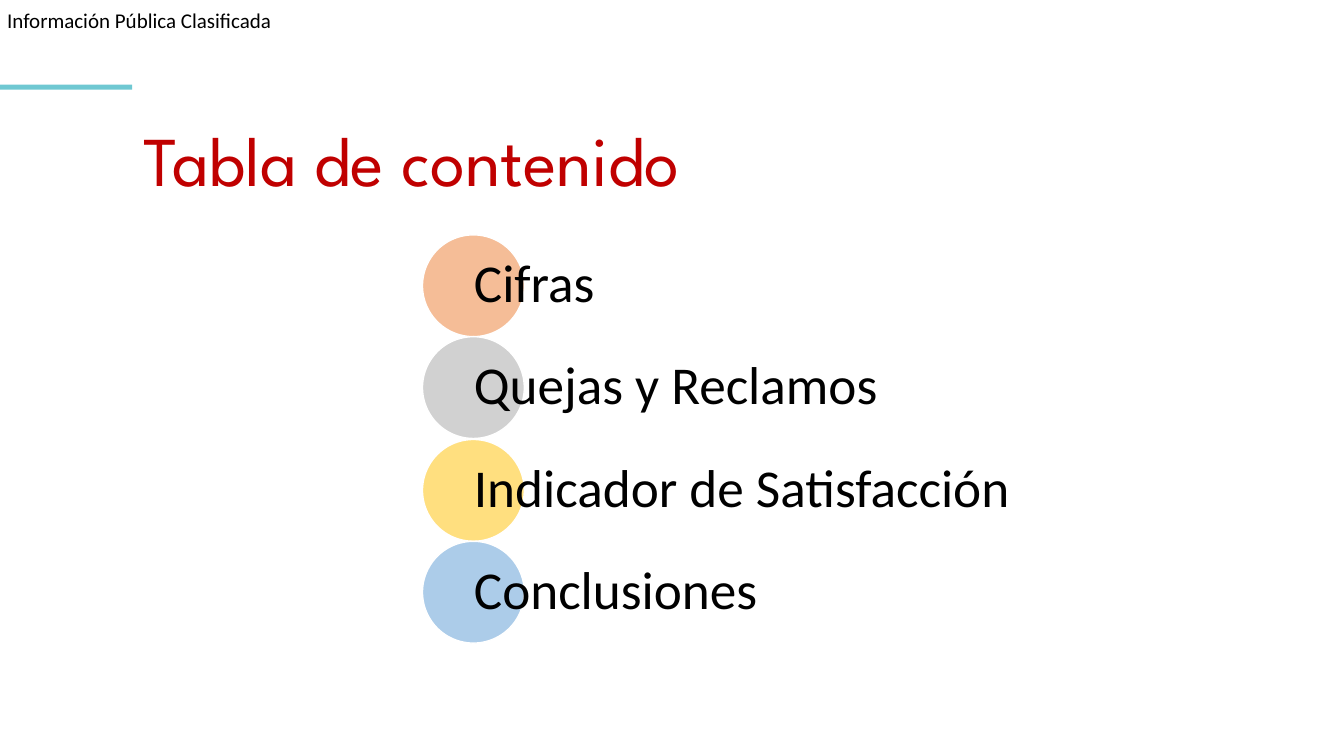
import pptx
import pptx.dml.color
import pptx.enum.shapes
import pptx.enum.text
import pptx.util
from lxml import etree
from pptx.oxml.ns import qn

Color = pptx.dml.color.RGBColor
Shape = pptx.enum.shapes.MSO_SHAPE
Align = pptx.enum.text.PP_ALIGN
Anchor = pptx.enum.text.MSO_ANCHOR
Fit = pptx.enum.text.MSO_AUTO_SIZE

BLACK = Color(0x00, 0x00, 0x00)
WHITE = Color(0xFF, 0xFF, 0xFF)
RED = Color(0xC0, 0x00, 0x00)
TEAL = Color(0x6F, 0xC8, 0xD2)
ORANGE = Color(0xED, 0x7D, 0x31)
GRAY = Color(0xA5, 0xA5, 0xA5)
GOLD = Color(0xFF, 0xC0, 0x00)
BLUE = Color(0x5B, 0x9B, 0xD5)

SCALE = 9144  # EMU per px, 100 px to the inch


def px(*sizes):
    return [pptx.util.Emu(size * SCALE) for size in sizes]


class Page:
    body = "Calibri"
    head = "League Spartan"

    def __init__(self, deck):
        self.slide = deck.slides.add_slide(deck.slide_layouts[5])

    def style(self, para, text, size, font, color):
        para.text = text
        para.font.size = pptx.util.Pt(size)
        para.font.name = font
        para.font.color.rgb = color

    def title(self, text, box):
        title = self.slide.shapes.title
        title.left, title.top, title.width, title.height = px(*box)
        frame = title.text_frame
        frame.auto_size = Fit.NONE
        frame.word_wrap = False
        frame.vertical_anchor = Anchor.TOP
        para = frame.paragraphs[0]
        para.alignment = Align.CENTER
        self.style(para, text, 50, self.head, RED)

    def text(self, text, box, size, pad=0, anchor=Anchor.TOP, space=1.0):
        frame = self.slide.shapes.add_textbox(*px(*box)).text_frame
        frame.word_wrap = True
        frame.vertical_anchor = anchor
        frame.margin_left = frame.margin_right = 0
        frame.margin_top, frame.margin_bottom = px(pad, pad)
        para = frame.paragraphs[0]
        para.line_spacing = space
        self.style(para, text, size, self.body, BLACK)

    def shape(self, kind, box, color, alpha=100, edge=None):
        shape = self.slide.shapes.add_shape(kind, *px(*box))
        shape.shadow.inherit = False
        shape.fill.solid()
        shape.fill.fore_color.rgb = color
        if alpha < 100:
            tint = shape.fill._xPr.find(qn("a:solidFill"))[0]
            etree.SubElement(tint, qn("a:alpha"), val=str(alpha * 1000))
        if edge is None:
            shape.line.fill.background()
        else:
            shape.line.color.rgb = edge
            shape.line.width = pptx.util.Pt(1)


def main():
    deck = pptx.Presentation()
    deck.slide_width, deck.slide_height = px(1333, 750)
    page = Page(deck)

    # Header label, accent bar and title
    page.text("Información Pública Clasificada", (7, 7, 268, 25), 15)
    page.shape(Shape.RECTANGLE, (0, 84, 131, 5), TEAL)
    page.title("Tabla de contenido", (98, 111, 621, 94))

    # Contents: each entry starts at the centre of its circle
    items = [
        ("Cifras", ORANGE),
        ("Quejas y Reclamos", GRAY),
        ("Indicador de Satisfacción", GOLD),
        ("Conclusiones", BLUE),
    ]
    left, top, size, pitch = 419, 233, 101, 101.4
    for row, (name, color) in enumerate(items):
        y = round(top + row * pitch)
        page.shape(Shape.OVAL, (left, y, size, size), color, 50, WHITE)
        page.text(name, (left + size // 2 + 1, y, 541, size), 38,
                  5, Anchor.MIDDLE, 0.9)

    deck.save("out.pptx")


if __name__ == "__main__":
    main()
